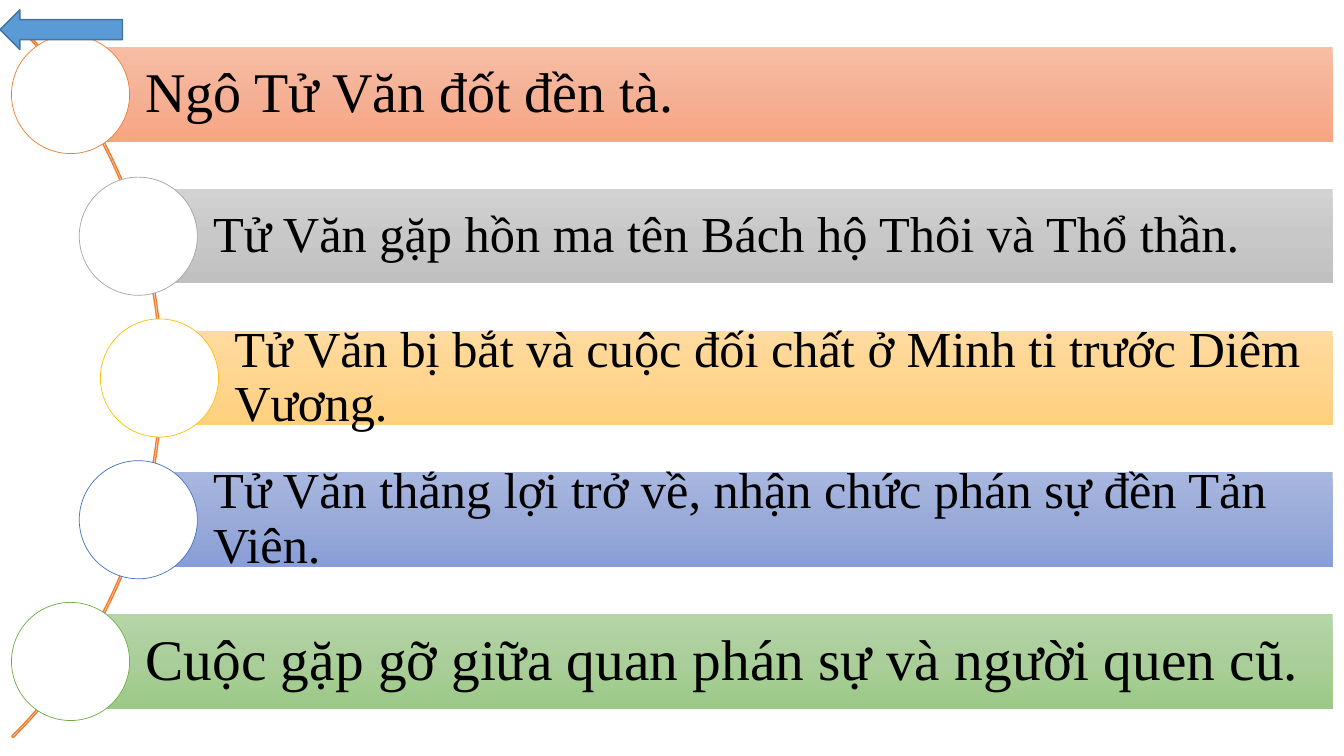
from copy import deepcopy

from pptx import Presentation
from pptx.dml.color import RGBColor as Rgb
from pptx.enum.shapes import MSO_SHAPE as Kind
from pptx.enum.text import MSO_ANCHOR as Anchor, PP_ALIGN as Align
from pptx.oxml.ns import qn
from pptx.util import Pt

FONT = "Times New Roman"
COLORS = {
    "text": "000000", "disc": "FFFFFF",
    "orange": "ED7D31", "gray": "A5A5A5", "gold": "FFC000",
    "blue": "4472C4", "green": "70AD47",
    "arrow": "5B9BD5", "edge": "43739E",
}
FADES = {
    "orange": ("F7BDA5", "F5B196", "F8A582"),
    "gray": ("D2D2D2", "C8C8C8", "C0C0C0"),
    "gold": ("FFDB9E", "FFD590", "FFD07C"),
    "blue": ("A8B7DF", "9AABD9", "889ED7"),
    "green": ("B5D5A7", "AACE9A", "9CC987"),
}
# text, size, bar left, hue
EVENTS = [
    ("Ngô Tử Văn đốt đền tà.", 40, 50.4, "orange"),
    ("Tử Văn gặp hồn ma tên Bách hộ Thôi và Thổ thần.", 36, 98.8, "gray"),
    ("Tử Văn bị bắt và cuộc đối chất ở Minh ti trước Diêm Vương.", 36, 113.9, "gold"),
    ("Tử Văn thắng lợi trở về, nhận chức phán sự đền Tản Viên.", 36, 98.8, "blue"),
    ("Cuộc gặp gỡ giữa quan phán sự và người quen cũ.", 41, 50.4, "green"),
]
WIDTH, HEIGHT = 960, 540
RIGHT = 952
STEP, FIRST = 101.25, 67.5
BAR, DISC, ARC = 67.5, 84.4, 726.5
INDENT = 53.5

deck = Presentation()
deck.slide_width, deck.slide_height = Pt(WIDTH), Pt(HEIGHT)
slide = deck.slides.add_slide(deck.slide_layouts[6])


def add(kind, x, y, w, h, fill=None, line=None, weight=1):
    shape = slide.shapes.add_shape(kind, Pt(x), Pt(y), Pt(w), Pt(h))
    shape.shadow.inherit = False
    if fill:
        shape.fill.solid()
        shape.fill.fore_color.rgb = Rgb.from_string(COLORS[fill])
    else:
        shape.fill.background()
    if line:
        shape.line.color.rgb = Rgb.from_string(COLORS[line])
        shape.line.width = Pt(weight)
    else:
        shape.line.fill.background()
    return shape


def fade(shape, hues):
    """Fill from top to bottom with three evenly spaced hues."""
    shape.fill.gradient()
    stops = shape._element.spPr.find(qn("a:gradFill")).find(qn("a:gsLst"))
    stops.insert(1, deepcopy(stops[0]))
    for i, (stop, hue) in enumerate(zip(shape.fill.gradient_stops, hues)):
        stop.position = i / 2
        stop.color.rgb = Rgb.from_string(hue)
    shape.fill.gradient_angle = 270


def write(shape, text, size):
    frame = shape.text_frame
    frame.word_wrap = True
    frame.vertical_anchor = Anchor.MIDDLE
    frame.margin_left = Pt(INDENT)
    frame.margin_right = frame.margin_top = frame.margin_bottom = Pt(size / 5)
    para = frame.paragraphs[0]
    para.alignment = Align.LEFT
    para.line_spacing = 0.9
    run = para.add_run()
    run.text = text
    run.font.name, run.font.size = FONT, Pt(size)
    run.font.color.rgb = Rgb.from_string(COLORS["text"])


arc = add(Kind.BLOCK_ARC, -610.6, (HEIGHT - ARC) / 2, ARC, ARC, line="orange")
for i, value in enumerate((189, 27, 0.002)):
    arc.adjustments[i] = value

for i, (text, size, left, hue) in enumerate(EVENTS):
    mid = FIRST + i * STEP
    bar = add(Kind.RECTANGLE, left, mid - BAR / 2, RIGHT - left, BAR)
    fade(bar, FADES[hue])
    write(bar, text, size)
    add(Kind.OVAL, left - DISC / 2, mid - DISC / 2, DISC, DISC, "disc", hue, 0.5)

add(Kind.LEFT_ARROW, 0, 7, 87.5, 28.4, "arrow", "edge")

deck.save("out.pptx")
